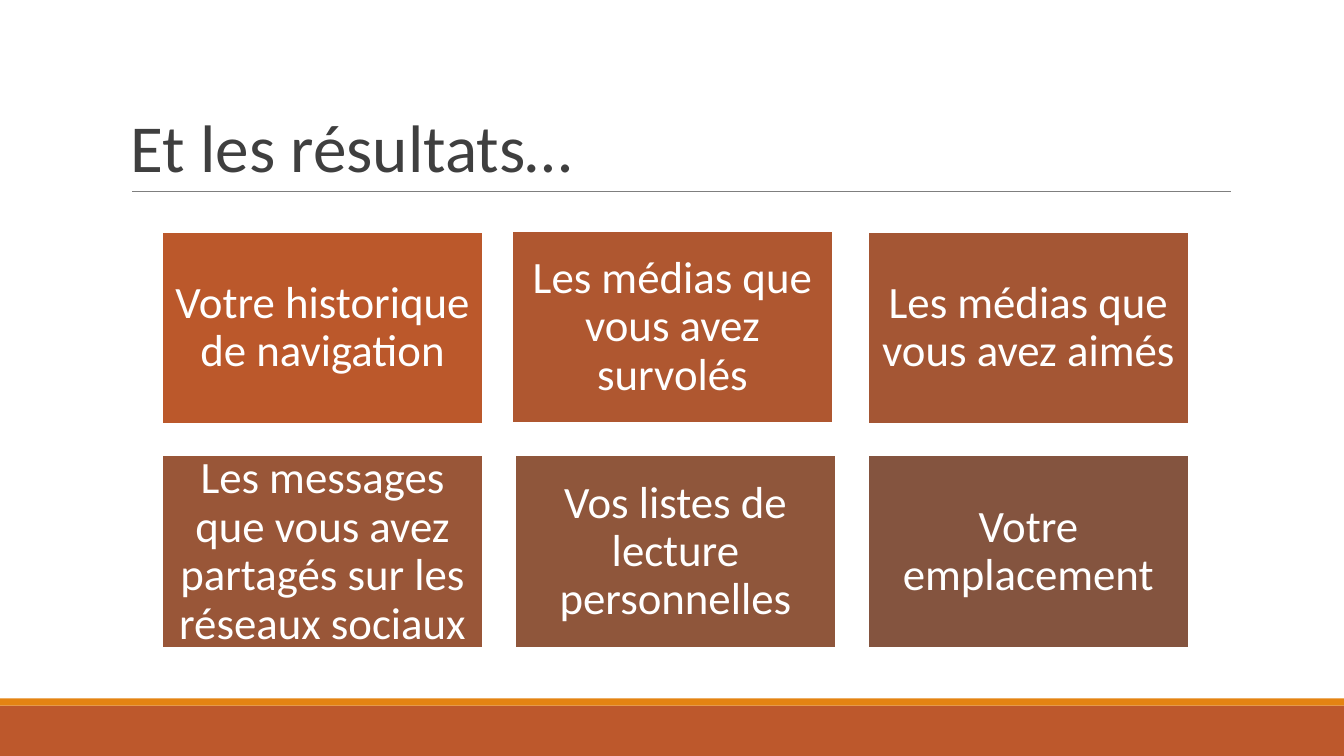
from lxml import etree
from pptx import Presentation
from pptx.dml.color import RGBColor
from pptx.enum.shapes import MSO_CONNECTOR, MSO_SHAPE
from pptx.enum.text import MSO_ANCHOR, PP_ALIGN
from pptx.oxml.ns import qn
from pptx.util import Inches, Pt

RECTANGLE = MSO_SHAPE.RECTANGLE
STRAIGHT = MSO_CONNECTOR.STRAIGHT
MIDDLE, BOTTOM = MSO_ANCHOR.MIDDLE, MSO_ANCHOR.BOTTOM
LEFT, CENTER = PP_ALIGN.LEFT, PP_ALIGN.CENTER

COLORS = {
    "white": "FFFFFF",
    "title": "3F3F3F",
    "rule": "7F7F7F",
    "footer": "BD582C",
    "accent": "E48312",
}
TITLE_FORMAT = {
    "frame": {"vertical_anchor": BOTTOM, "margin_left": Inches(0.1), "margin_right": Inches(0.1),
              "margin_top": Inches(0.05), "margin_bottom": Inches(0.05)},
    "paragraph": {"alignment": LEFT, "line_spacing": 0.85},
    "font": {"size": Pt(48)},
    "color": COLORS["title"],
}
CARD_FORMAT = {
    "frame": {"vertical_anchor": MIDDLE, "margin_left": Inches(0.13), "margin_right": Inches(0.13),
              "margin_top": Inches(0.13), "margin_bottom": Inches(0.13)},
    "paragraph": {"alignment": CENTER, "line_spacing": 0.9},
    "font": {"size": Pt(32)},
    "color": COLORS["white"],
}
CARDS = [
    ("Votre historique de navigation", "BB582B"),
    ("Les médias que vous avez survolés", "AF5730"),
    ("Les médias que vous avez aimés", "A45634"),
    ("Les messages que vous avez partagés sur les réseaux sociaux", "995638"),
    ("Vos listes de lecture personnelles", "8F563B"),
    ("Votre emplacement", "84543F"),
]
COLUMNS = 3
CARD_LEFT, CARD_TOP = 1.61, 2.3
CARD_WIDTH, CARD_HEIGHT = 3.18, 1.91
COLUMN_STEP, ROW_STEP = 3.5, 2.22
CARD_SHIFTS = {1: (-0.03, -0.01)}


class SlideBuilder:
    def __init__(self, slide, font_name):
        self.slide = slide
        self.font_name = font_name

    def apply(self, target, values):
        for name, value in values.items():
            setattr(target, name, value)

    def fill_text(self, shape, text, style):
        frame = shape.text_frame
        self.apply(frame, {"word_wrap": True, **style["frame"]})
        paragraph = frame.paragraphs[0]
        self.apply(paragraph, style["paragraph"])
        run = paragraph.add_run()
        run.text = text
        self.apply(run.font, {"name": self.font_name, **style["font"]})
        run.font.color.rgb = RGBColor.from_string(style["color"])

    def text_box(self, box, text, style):
        shape = self.slide.shapes.add_textbox(*map(Inches, box))
        self.fill_text(shape, text, style)

    def rectangle(self, box, fill):
        shape = self.slide.shapes.add_shape(RECTANGLE, *map(Inches, box))
        shape.shadow.inherit = False
        shape.fill.solid()
        shape.fill.fore_color.rgb = RGBColor.from_string(fill)
        shape.line.fill.background()
        return shape

    def card(self, box, text, fill):
        shape = self.rectangle(box, fill)
        shape.line.color.rgb = RGBColor.from_string(COLORS["white"])
        shape.line.width = Pt(1.25)
        self.fill_text(shape, text, CARD_FORMAT)

    def rule(self, start, end, color, width):
        connector = self.slide.shapes.add_connector(STRAIGHT, *map(Inches, start + end))
        connector.line.color.rgb = RGBColor.from_string(color)
        connector.line.width = Pt(width)
        etree.SubElement(connector._element.spPr, qn("a:effectLst"))


def main():
    presentation = Presentation()
    presentation.slide_width = Inches(13.33)
    presentation.slide_height = Inches(7.5)
    slide = presentation.slides.add_slide(presentation.slide_layouts[6])
    builder = SlideBuilder(slide, "Calibri")

    builder.rectangle((0, 7, 13.33, 0.5), COLORS["footer"])
    builder.rectangle((0, 6.93, 13.33, 0.07), COLORS["accent"])
    builder.rule((1.31, 1.9), (12.21, 1.9), COLORS["rule"], 0.75)
    builder.text_box((1.2, 0.31, 11, 1.59), "Et les résultats…", TITLE_FORMAT)

    for index, (text, fill) in enumerate(CARDS):
        row, column = divmod(index, COLUMNS)
        shift_x, shift_y = CARD_SHIFTS.get(index, (0, 0))
        left = CARD_LEFT + column * COLUMN_STEP + shift_x
        top = CARD_TOP + row * ROW_STEP + shift_y
        builder.card((left, top, CARD_WIDTH, CARD_HEIGHT), text, fill)

    presentation.save("out.pptx")


if __name__ == "__main__":
    main()
